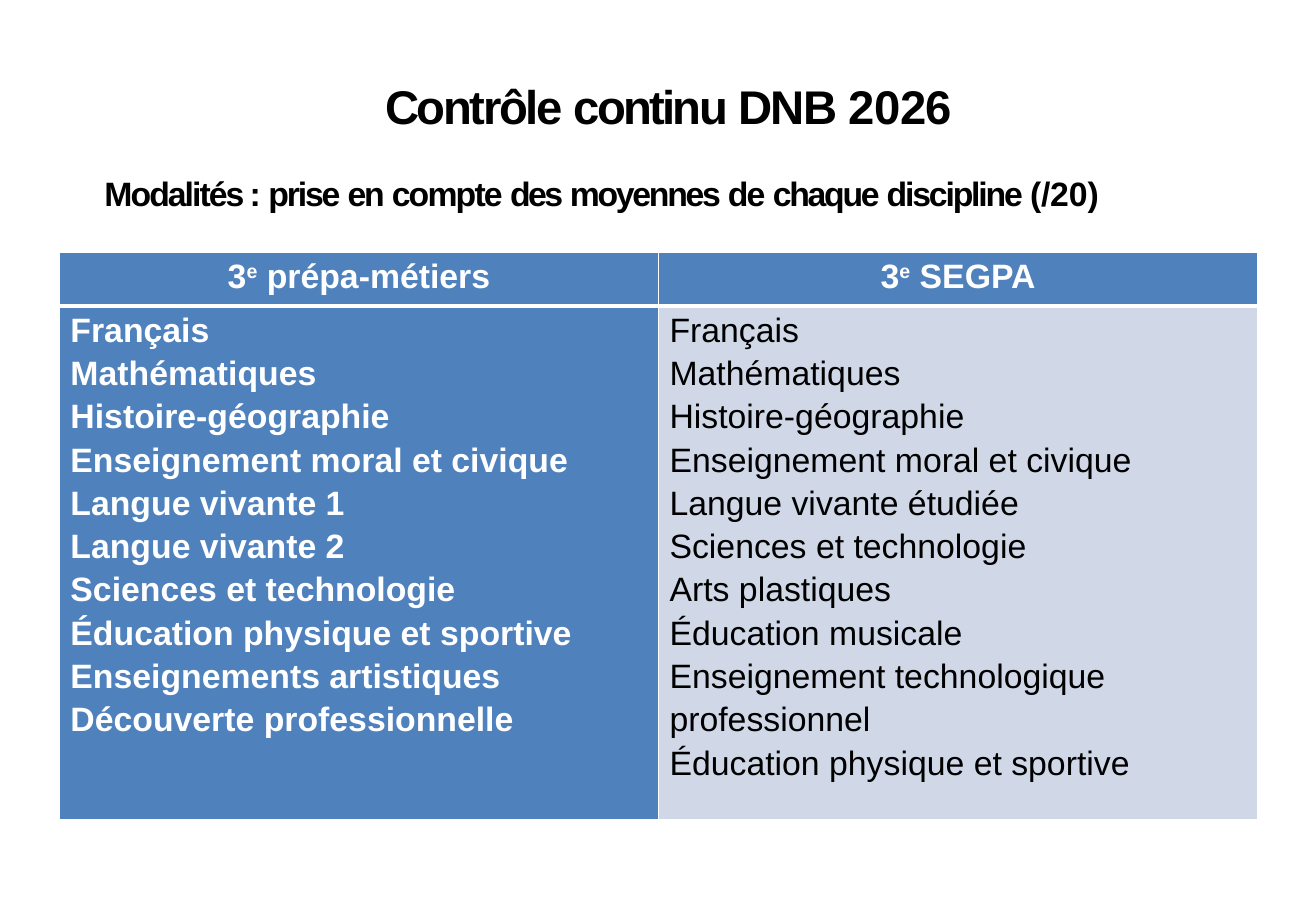
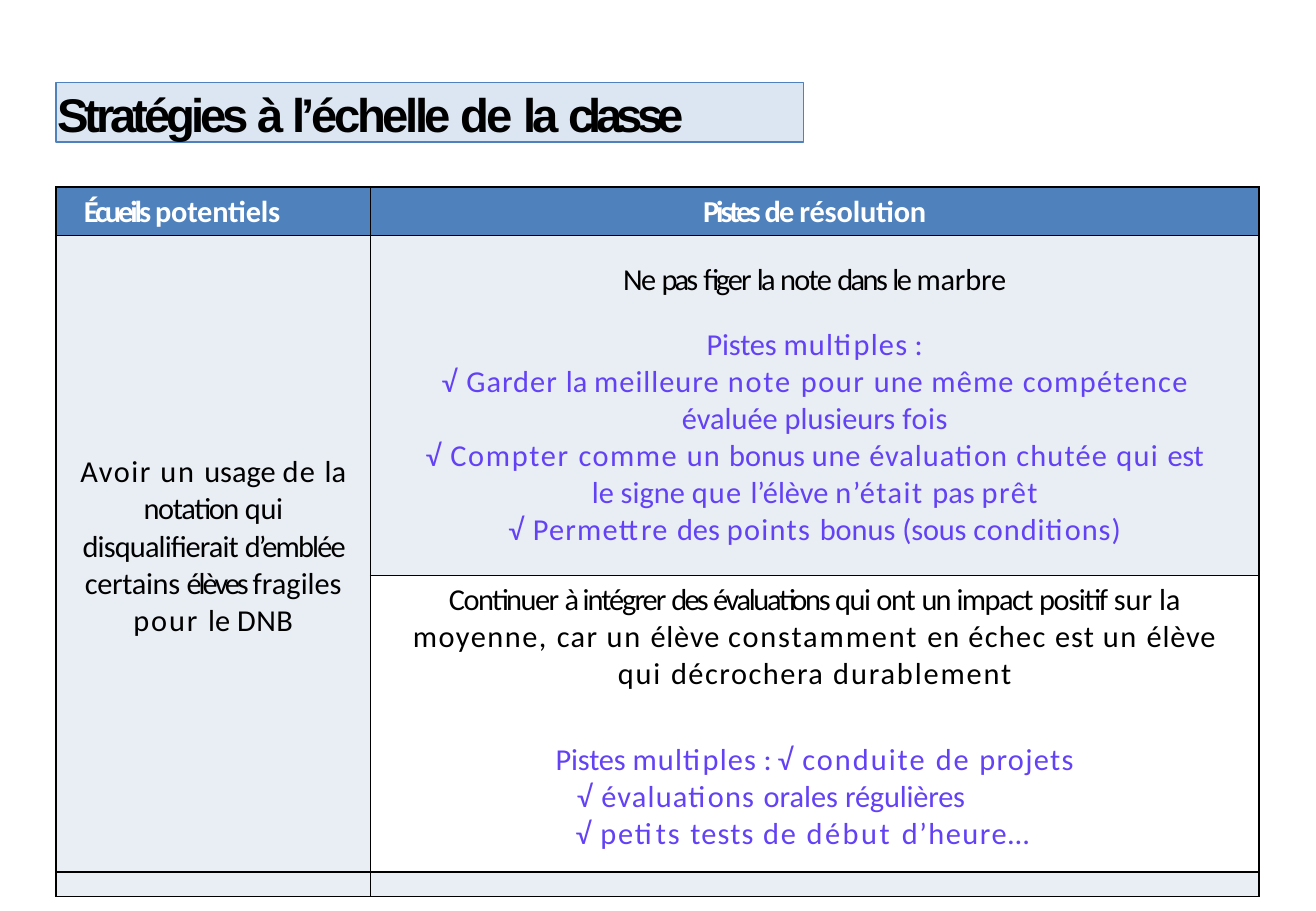
from dataclasses import dataclass, replace

from lxml import etree
from pptx import Presentation
from pptx.dml.color import RGBColor
from pptx.enum.shapes import MSO_SHAPE
from pptx.enum.text import MSO_ANCHOR, PP_ALIGN
from pptx.oxml.ns import qn
from pptx.util import Inches, Pt

BLACK = RGBColor(0x00, 0x00, 0x00)
WHITE = RGBColor(0xFF, 0xFF, 0xFF)
BLUE = RGBColor(0x4F, 0x81, 0xBD)
TITLE_BAND = RGBColor(0xDC, 0xE6, 0xF2)
SUBJECT_TINT = RGBColor(0xD0, 0xD8, 0xE8)
STRATEGY_TINT = RGBColor(0xE9, 0xED, 0xF4)
VIOLET = RGBColor(0x63, 0x42, 0xF5)


@dataclass(frozen=True)
class Style:
    font: str
    size: float
    color: RGBColor = BLACK
    bold: bool = False


@dataclass(frozen=True)
class Para:
    runs: list
    style: Style
    align: PP_ALIGN = PP_ALIGN.LEFT
    left: float = 0
    right: float = 0
    before: float = 0
    line: float = 1.0


TITLE = Style("Arial", 28, bold=True)
SUBTITLE = replace(TITLE, size=20)
SUBJECT = Style("Arial", 20)
SUBJECT_BOLD = replace(SUBJECT, color=WHITE, bold=True)
BODY = Style("Calibri", 18)
HEADER = replace(BODY, color=WHITE, bold=True)
IDEA = replace(BODY, color=VIOLET)

PREPA_SUBJECTS = [
    "Français", "Mathématiques", "Histoire-géographie",
    "Enseignement moral et civique", "Langue vivante 1", "Langue vivante 2",
    "Sciences et technologie", "Éducation physique et sportive",
    "Enseignements artistiques", "Découverte professionnelle",
]
SEGPA_SUBJECTS = [
    "Français", "Mathématiques", "Histoire-géographie",
    "Enseignement moral et civique", "Langue vivante étudiée",
    "Sciences et technologie", "Arts plastiques", "Éducation musicale",
    "Enseignement technologique professionnel",
    "Éducation physique et sportive",
]

PITFALL = [
    ("Avoir ", 0.9), ("un ", 1), ("usage ", 0), ("de ", 0.8), ("la ", 0),
    ("notation ", -0.8), ("qui ", -0.2), ("disqualifierait ", -0.5),
    ("d’emblée ", -1.1), ("certains ", -0.2), ("élèves ", -1.8),
    ("fragiles ", 0), ("pour ", 1.1), ("le ", 0), ("DNB", 0.3),
]
OPEN_GRADE = [
    ("Ne ", -0.9), ("pas", -1.7), (" figer ", -1.1), ("la ", -1.5),
    ("note ", -1), ("dans ", -1.5), ("le ", -1.4), ("marbre", -0.1),
]
GRADE_IDEAS = [
    [("√ ", 0.8), ("Garder ", 0.6), ("la ", 0), ("meilleure ", 0.6),
     ("note ", 1.1), ("pour ", 0.9), ("une ", 0.5), ("même ", 0.7),
     ("compétence", 0.8)],
    [("évaluée plusieurs ", 0), ("fois", 0.3)],
    [("√ ", 0.8), ("Compter ", 1), ("comme ", 0.9), ("un ", 0.7),
     ("bonus ", 0), ("une ", 0.5), ("évaluation ", 0.6), ("chutée ", 0.7),
     ("qui ", 0.8), ("est", -0.2)],
    [("le signe ", 0), ("que ", 0.7), ("l’élève ", 0), ("n’était ", 0.9),
     ("pas ", 0), ("prêt", 0.9)],
    [("√ ", 0.8), ("Permettre ", 0.7), ("des ", 0), ("points ", 0.8),
     ("bonus ", 0), ("(sous ", -0.1), ("conditions)", 0.6)],
]
POSITIVE_IMPACT = [
    ("Continuer ", -0.9), ("à ", -2), ("intégrer ", -1.2), ("des ", -1.6),
    ("évaluations ", -1.4), ("qui ", -0.9), ("ont ", -0.7), ("un ", -1.1),
    ("impact ", -0.9), ("positif ", -0.8), ("sur la ", 0),
    ("moyenne, ", 0.9), ("car ", 0.8), ("un ", 1), ("élève ", 0.5),
    ("constamment ", 1.1), ("en ", 0.6), ("échec ", 0.8), ("est ", 0.6),
    ("un ", 1), ("élève ", 0.5), ("qui ", 1.1), ("décrochera ", 0.9),
    ("durablement", 1.1),
]
PROJECTS = [
    ("Pistes ", -0.1), ("multiples", 0.7), (" : ", -0.5), ("√ ", 0.8),
    ("conduite ", 1.2), ("de ", 1.1), ("projets", 0.8),
]
ORAL_TESTS = [
    ("√", 0.8), (" évaluations ", 0.7), ("orales ", 0), ("régulières", -0.1),
]
SHORT_TESTS = [
    ("√ ", 0.8), ("petits ", 1.1), ("tests ", 0.7), ("de ", 1.1),
    ("début ", 1.5), ("d’heure…", 0.9),
]


def centered(runs, style, **layout):
    return Para(runs, style, PP_ALIGN.CENTER, **layout)


def write_paragraph(paragraph, content):
    paragraph.alignment = content.align
    paragraph.line_spacing = content.line
    paragraph.space_before = Pt(content.before)
    properties = paragraph._p.get_or_add_pPr()
    properties.set("marL", str(Inches(content.left)))
    properties.set("marR", str(Inches(content.right)))
    properties.set("indent", "0")
    for text, spacing, *baseline in content.runs:
        run = paragraph.add_run()
        run.text = text
        run.font.name = content.style.font
        run.font.size = Pt(content.style.size)
        run.font.bold = content.style.bold
        run.font.color.rgb = content.style.color
        run_properties = run._r.get_or_add_rPr()
        run_properties.set("spc", str(round(spacing * 100)))
        if baseline:
            run_properties.set("baseline", str(baseline[0] * 1000))


def write_text(frame, contents):
    for index, content in enumerate(contents):
        paragraph = frame.add_paragraph() if index else frame.paragraphs[0]
        write_paragraph(paragraph, content)


def add_title_box(slide, box, contents, fill=None, line=None):
    title = slide.shapes.add_shape(MSO_SHAPE.RECTANGLE, *map(Inches, box))
    title.shadow.inherit = False
    if fill is None:
        title.fill.background()
        title.line.fill.background()
    else:
        title.fill.solid()
        title.fill.fore_color.rgb = fill
        title.line.color.rgb = line
        title.line.width = Pt(0.75)
    frame = title.text_frame
    frame.word_wrap = True
    frame.vertical_anchor = MSO_ANCHOR.TOP
    frame.margin_left = frame.margin_right = frame.margin_bottom = 0
    frame.margin_top = Inches(0.02)
    write_text(frame, contents)


def add_grid(slide, left, top, widths, heights):
    table = slide.shapes.add_table(
        len(heights), len(widths), Inches(left), Inches(top),
        Inches(sum(widths)), Inches(sum(heights))).table
    table.first_row = table.horz_banding = False
    for column, width in zip(table.columns, widths):
        column.width = Inches(width)
    for row, height in zip(table.rows, heights):
        row.height = Inches(height)
    return table


def set_borders(cell, color, top=1, bottom=1):
    properties = cell._tc.get_or_add_tcPr()
    sides = [("a:lnL", 1), ("a:lnR", 1), ("a:lnT", top), ("a:lnB", bottom)]
    for index, (tag, width) in enumerate(sides):
        border = etree.Element(qn(tag), w=str(Pt(width)))
        fill = etree.SubElement(border, qn("a:solidFill"))
        etree.SubElement(fill, qn("a:srgbClr"), val=str(color))
        properties.insert(index, border)


def fill_cell(cell, contents, fill, sides=0, top=0, bottom=0):
    cell.margin_left = cell.margin_right = Inches(sides)
    cell.margin_top, cell.margin_bottom = Inches(top), Inches(bottom)
    cell.fill.solid()
    cell.fill.fore_color.rgb = fill
    if contents:
        write_text(cell.text_frame, contents)
    else:
        paragraph = cell.text_frame.paragraphs[0]._p
        etree.SubElement(paragraph, qn("a:endParaRPr"), sz="800")


def add_assessment_slide(slide):
    add_title_box(slide, (0.85, 0.62, 9.53, 1.14), [
        Para([("Contrôle ", -1.4), ("continu", -1.6), (" DNB ", -1.2),
              ("2026", -0.2)], TITLE, left=2.32),
        Para([("Modalités : ", -1.2), ("prise ", -1.3), ("en ", -1.4),
              ("compte ", -1.1), ("des ", -1.6), ("moyennes ", -1.4),
              ("de ", -1.1), ("chaque ", -1.4), ("discipline ", -1.3),
              ("(/20)", -0.1)], SUBTITLE, left=0.01, before=22.9),
    ])
    table = add_grid(slide, 0.49, 2.08, [4.93, 4.93], [0.44, 4.23])
    tracks = [
        (" prépa-métiers", PREPA_SUBJECTS, SUBJECT_BOLD, BLUE),
        (" SEGPA", SEGPA_SUBJECTS, SUBJECT, SUBJECT_TINT),
    ]
    for column, (track, subjects, style, fill) in enumerate(tracks):
        heading, listing = table.cell(0, column), table.cell(1, column)
        fill_cell(heading, [centered([("3", 0), ("e", 0, 30), (track, 0)],
                                     SUBJECT_BOLD, line=1.15)],
                  BLUE, sides=0.07)
        fill_cell(listing, [Para([(subject, 0)], style, left=0.02, line=1.15)
                            for subject in subjects], fill, sides=0.07)
        set_borders(heading, WHITE, bottom=3)
        set_borders(listing, WHITE, top=3)


def add_strategy_slide(slide):
    table = add_grid(slide, 0.46, 1.54, [2.59, 7.31], [0.4, 2.8, 2.44, 0.2])
    fill_cell(table.cell(0, 0), [
        Para([("Écueils ", -1.8), ("potentiels", -0.1)], HEADER, left=0.23),
    ], BLUE, top=0.05)
    fill_cell(table.cell(0, 1), [
        centered([("Pistes ", -1.8), ("de ", -1.1), ("résolution", -0.1)],
                 HEADER),
    ], BLUE, top=0.05)

    pitfall = table.cell(1, 0)
    pitfall.merge(table.cell(2, 0))
    fill_cell(pitfall, [centered(PITFALL, BODY, left=0.13, right=0.13)],
              STRATEGY_TINT, bottom=0.12)
    pitfall.vertical_anchor = MSO_ANCHOR.MIDDLE

    fill_cell(table.cell(1, 1), [
        centered(OPEN_GRADE, BODY),
        centered([("Pistes ", -0.1), ("multiples", 0.7), (" :", -0.5)], IDEA,
                 before=16.8),
        *[centered(idea, IDEA) for idea in GRADE_IDEAS],
    ], STRATEGY_TINT, top=0.21)
    fill_cell(table.cell(2, 1), [
        centered(POSITIVE_IMPACT, BODY, left=0.34, right=0.34),
        centered(PROJECTS, IDEA, left=0.34, right=0.34, before=28.6),
        centered(ORAL_TESTS, IDEA, right=0.72),
        centered(SHORT_TESTS, IDEA, right=0.2),
    ], WHITE, top=0.05)
    for column in range(2):
        fill_cell(table.cell(3, column), [], STRATEGY_TINT)
    for cell in table.iter_cells():
        set_borders(cell, BLACK)

    add_title_box(slide, (0.46, 0.68, 6.15, 0.49), [
        Para([("Stratégies ", -2.4), ("à ", -3), ("l’échelle ", -2),
              ("de ", -1.6), ("la ", -2.3), ("classe", -3.4)], TITLE,
             left=0.01),
    ], TITLE_BAND, BLUE)


def main():
    deck = Presentation()
    deck.slide_width, deck.slide_height = Inches(10.83), Inches(7.5)
    for build in (add_assessment_slide, add_strategy_slide):
        build(deck.slides.add_slide(deck.slide_layouts[6]))
    deck.save("out.pptx")


if __name__ == "__main__":
    main()
